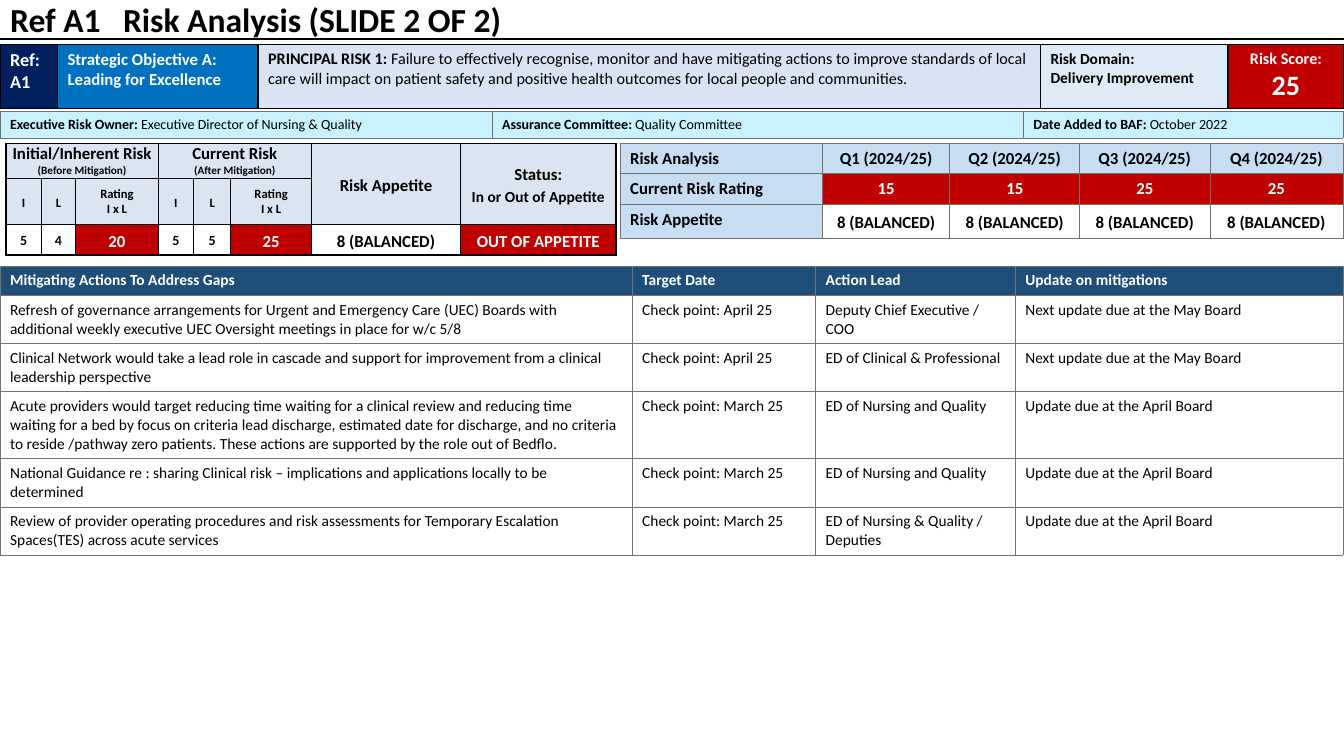
from lxml import etree
from pptx import Presentation
from pptx.dml.color import RGBColor
from pptx.enum.text import MSO_ANCHOR as Anchor, MSO_AUTO_SIZE as AutoSize, PP_ALIGN as Align
from pptx.oxml import parse_xml
from pptx.oxml.ns import nsdecls, qn
from pptx.util import Inches, Pt

WIDTH, HEIGHT = 13.33, 7.5
FONT = "Calibri"
BLACK, WHITE = RGBColor(0, 0, 0), RGBColor(255, 255, 255)
GREY = RGBColor(0x76, 0x71, 0x71)
RED = RGBColor(0xC0, 0, 0)
NAVY = RGBColor(0, 0x20, 0x60)
BLUE = RGBColor(0, 0x70, 0xC0)
STEEL = RGBColor(0x1F, 0x4E, 0x79)
LAVENDER = RGBColor(0xDA, 0xE3, 0xF3)
ICE = RGBColor(0xDE, 0xEB, 0xF7)
AQUA = RGBColor(0xC9, 0xF1, 0xFF)
SKY = RGBColor(0xC7, 0xDD, 0xF1)
MIST = RGBColor(0xDB, 0xE5, 0xF1)
DARK_FILLS = (RED, NAVY, BLUE, STEEL)

# In a line of text, "|" ends the bold lead; what follows is regular.
TITLE = "Ref A1\tRisk Analysis (SLIDE 2 OF 2)"
HEADER = [
    ("Ref: A1", dict(fill=NAVY, sizes=(13,))),
    ("Strategic Objective A:\nLeading for Excellence", dict(fill=BLUE, sizes=(12,))),
    ("PRINCIPAL RISK 1: |Failure to effectively recognise, monitor and have mitigating actions "
     "to improve standards of local care will impact on patient safety and positive health "
     "outcomes for local people and communities.", dict(fill=LAVENDER, sizes=(11.5,))),
    ("Risk Domain:\nDelivery Improvement", dict(fill=ICE, sizes=(11,))),
    ("Risk Score:\n25", dict(fill=RED, sizes=(11.5, 20), centred=True)),
]
OWNERS = [
    "Executive Risk Owner: |Executive Director of Nursing & Quality",
    "Assurance Committee: |Quality Committee",
    "Date Added to BAF: |October 2022",
]
QUARTERS = ["Q1 (2024/25)", "Q2 (2024/25)", "Q3 (2024/25)", "Q4 (2024/25)"]
RATINGS = ["15", "15", "25", "25"]
APPETITE = "8 (BALANCED)"
RISK_HEADS = ["Initial/Inherent Risk\n(Before Mitigation)", None, None,
              "Current Risk\n(After Mitigation)", None, None,
              "Risk Appetite", "Status:\nIn or Out of Appetite"]
RISK_PARTS = ["I", "L", "Rating\nI x L"] * 2 + [None, None]
RISK_VALUES = ["5", "4", "20", "5", "5", "25", APPETITE, "OUT OF APPETITE"]
ACTION_HEADS = ["Mitigating Actions To Address Gaps", "Target Date", "Action Lead",
                "Update on mitigations"]
MAY, APRIL = "Next update due at the May Board", "Update due at the April Board"
ACTIONS = [
    ("Refresh of governance arrangements for Urgent and Emergency Care (UEC) Boards with "
     "additional weekly executive UEC Oversight meetings in place for w/c 5/8",
     "Check point: April 25", "Deputy Chief Executive / COO", MAY),
    ("Clinical Network would take a lead role in cascade and support for improvement from a "
     "clinical leadership perspective",
     "Check point: April 25", "ED of Clinical & Professional", MAY),
    ("Acute providers would target reducing time waiting for a clinical review and reducing time "
     "waiting for a bed by focus on criteria lead discharge, estimated date for discharge, and "
     "no criteria to reside /pathway zero patients. These actions are supported by the role out "
     "of Bedflo.",
     "Check point: March 25", "ED of Nursing and Quality", APRIL),
    ("National Guidance re : sharing Clinical risk – implications and applications locally to "
     "be determined",
     "Check point: March 25", "ED of Nursing and Quality", APRIL),
    ("Review of provider operating procedures and risk assessments for Temporary Escalation "
     "Spaces(TES) across acute services",
     "Check point: March 25", "ED of Nursing & Quality / Deputies", APRIL),
]


def write(tf, text, sizes=(11,), color=BLACK, bold=True, align=Align.LEFT, spacing=None):
    """Put each line in its own paragraph; the last size serves all further lines."""
    for i, line in enumerate(text.split("\n")):
        p = tf.paragraphs[0] if i == 0 else tf.add_paragraph()
        p.alignment = align
        if spacing:
            p.line_spacing = spacing
        for j, part in enumerate(line.split("|")):
            r = p.add_run()
            r.text = part
            r.font.name, r.font.size = FONT, Pt(sizes[min(i, len(sizes) - 1)])
            r.font.bold = bold and j == 0
            r.font.color.rgb = color


def set_borders(cell, color, width):
    for i, side in enumerate(("lnL", "lnR", "lnT", "lnB")):
        cell._tc.get_or_add_tcPr().insert(i, parse_xml(
            f'<a:{side} {nsdecls("a")} w="{Pt(width)}"><a:solidFill>'
            f'<a:srgbClr val="{color}"/></a:solidFill></a:{side}>'))


def add_table(s, left, top, cols, heights, rows, border, merges=(), insets=None):
    """Each cell is (text, format); text None marks a cell covered by a merge."""
    table = s.shapes.add_table(len(rows), len(cols), Inches(left), Inches(top),
                               Inches(sum(cols)), Inches(sum(heights))).table
    table.first_row = table.horz_banding = False
    for column, width in zip(table.columns, cols):
        column.width = Inches(width)
    for row, height in zip(table.rows, heights):
        row.height = Inches(height)
    for y, row in enumerate(rows):
        for x, (text, fmt) in enumerate(row):
            fmt = dict(fmt)
            fill, centred = fmt.pop("fill"), fmt.pop("centred", False)
            cell = table.cell(y, x)
            cell.fill.solid()
            cell.fill.fore_color.rgb = fill
            set_borders(cell, *border)
            if insets:
                cell.margin_left = cell.margin_right = Inches(insets[0])
                cell.margin_top = cell.margin_bottom = Inches(insets[1])
            if centred:
                cell.vertical_anchor = Anchor.MIDDLE
                fmt["align"] = Align.CENTER
            if text is not None:
                write(cell.text_frame, text, color=WHITE if fill in DARK_FILLS else BLACK, **fmt)
    for first, last in merges:
        table.cell(*first).merge(table.cell(*last))


def add_title(s):
    sp = s.shapes.title
    sp.left, sp.top, sp.width, sp.height = 0, Inches(0.02), Inches(WIDTH), Inches(0.33)
    tf = sp.text_frame
    tf.auto_size, tf.vertical_anchor = AutoSize.NONE, Anchor.MIDDLE
    tabs = etree.SubElement(tf.paragraphs[0]._p.get_or_add_pPr(), qn("a:tabLst"))
    etree.SubElement(tabs, qn("a:tab"), pos=str(Inches(1.12)), algn="l")
    write(tf, TITLE, sizes=(24,))
    rule = s.shapes.add_connector(1, 0, Inches(0.39), Inches(WIDTH), Inches(0.39))
    rule.line.color.rgb, rule.line.width = BLACK, Pt(1.5)
    etree.SubElement(rule._element.spPr, qn("a:effectLst"))


def quarter_row(label, values, fill, **fmt):
    return [(label, dict(fill=SKY, sizes=(12,)))] + [
        (v, dict(fill=fill, sizes=(12,), centred=True, **fmt)) for v in values]


def risk_rows():
    base = dict(centred=True)
    heads = [(t, dict(base, fill=MIST, sizes=(12, 8))) for t in RISK_HEADS[:6]]
    heads += [(t, dict(base, fill=MIST, sizes=(12, 11), spacing=1.15)) for t in RISK_HEADS[6:]]
    parts = [(t, dict(base, fill=MIST, sizes=(9,), spacing=1.15 if t in ("I", "L") else None))
             for t in RISK_PARTS]
    values = [(t, dict(base, fill=RED if x in (2, 5, 7) else WHITE, spacing=1.15,
                       sizes=(10,) if len(t) == 1 else (12,)))
              for x, t in enumerate(RISK_VALUES)]
    return [heads, parts, values]


def main():
    prs = Presentation()
    prs.slide_width, prs.slide_height = Inches(WIDTH), Inches(HEIGHT)
    s = prs.slides.add_slide(prs.slide_layouts[5])
    add_title(s)
    thin, strong = (GREY, 0.5), (BLACK, 1)

    actions = [[(t, dict(fill=STEEL)) for t in ACTION_HEADS]]
    actions += [[(t, dict(fill=WHITE, bold=False)) for t in row] for row in ACTIONS]
    lines = (1, 2, 2, 3, 2, 2)
    add_table(s, 0, 2.64, (6.27, 1.82, 1.98, 3.25), [0.1 + 0.185 * n for n in lines],
              actions, thin)
    add_table(s, 0, 1.1, (4.88, 5.27, 3.17), (0.27,),
              [[(t, dict(fill=AQUA, sizes=(10,))) for t in OWNERS]], thin)
    add_table(s, 0, 0.44, (0.57, 1.99, 7.76, 1.86, 1.15), (0.63,), [HEADER], strong)
    add_table(s, 6.15, 1.42, (2.01, 1.26, 1.29, 1.29, 1.32), (0.3, 0.3, 0.34), [
        quarter_row("Risk Analysis", QUARTERS, SKY),
        quarter_row("Current Risk Rating", RATINGS, RED),
        quarter_row("Risk Appetite", [APPETITE] * len(QUARTERS), WHITE, spacing=1.15),
    ], thin)
    add_table(s, 0.06, 1.42, (0.35, 0.34, 0.82, 0.35, 0.37, 0.8, 1.48, 1.54),
              (0.35, 0.46, 0.3), risk_rows(), strong, insets=(0.05, 0),
              merges=[((0, 0), (0, 2)), ((0, 3), (0, 5)), ((0, 6), (1, 6)), ((0, 7), (1, 7))])
    prs.save("out.pptx")


if __name__ == "__main__":
    main()
